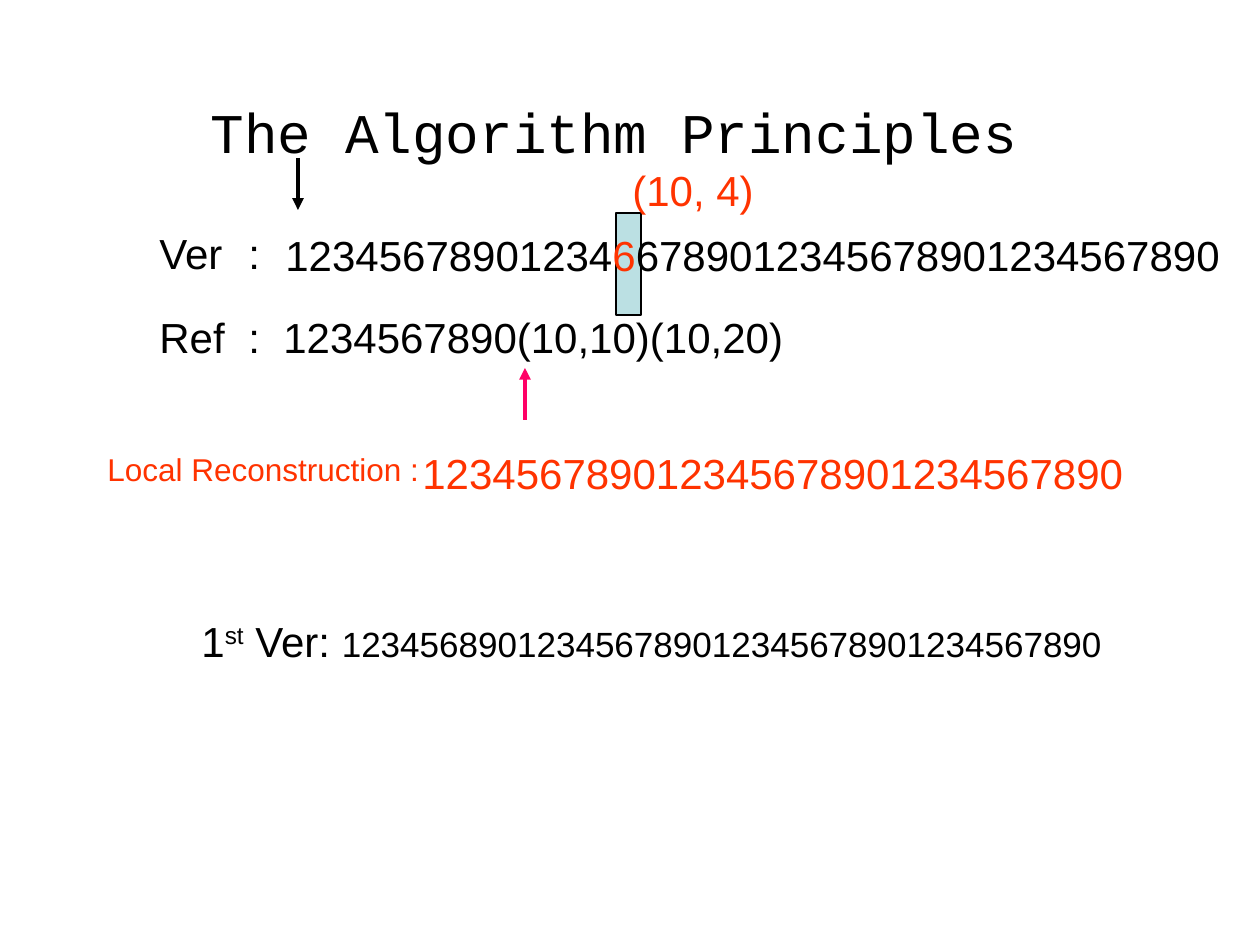
from typing import NamedTuple

from lxml.etree import SubElement
from pptx import Presentation
from pptx.dml.color import RGBColor
from pptx.enum.shapes import MSO_CONNECTOR as Connector, MSO_SHAPE as Shape
from pptx.enum.text import MSO_ANCHOR as Anchor, MSO_AUTO_SIZE as AutoSize, PP_ALIGN as Align
from pptx.oxml.ns import qn
from pptx.util import Emu, Pt

PX_PER_INCH = 126
BLACK = RGBColor(0x00, 0x00, 0x00)
ORANGE = RGBColor(0xFF, 0x33, 0x00)
PINK = RGBColor(0xFF, 0x00, 0x66)
PALE_TEAL = RGBColor(0xBB, 0xE0, 0xE3)
COLUMN_TABS = (89, 124)  # colon and digits, from the start of the label


class Run(NamedTuple):
    text: str
    color: RGBColor = BLACK
    size: int = 24
    superscript: bool = False


class Label(NamedTuple):
    left: int
    top: int
    width: int
    height: int
    runs: tuple[Run, ...]
    tabs: tuple[int, ...] = ()


class Arrow(NamedTuple):
    x: int
    start_y: int
    end_y: int
    color: RGBColor


LABELS = (
    Label(147, 305, 945, 63, (Run("Ref\t:\t1234567890(10,10)(10,20)"),), COLUMN_TABS),
    Label(147, 221, 126, 63, (Run("Ver\t:"),), COLUMN_TABS),
    Label(189, 609, 1092, 63, (
        Run("1"), Run("st", superscript=True), Run(" Ver: "),
        Run("123456890123456789012345678901234567890", size=20))),
    Label(273, 223, 966, 63, (
        Run("12345678901234"), Run("6", ORANGE), Run("6789012345678901234567890"))),
    Label(410, 441, 777, 63, (Run("123456789012345678901234567890", ORANGE),)),
    Label(95, 444, 347, 50, (Run("Local Reconstruction :", ORANGE, 18),)),
    Label(620, 158, 147, 63, (Run("(10, 4)", ORANGE),)),
)
ARROWS = (
    Arrow(298, 158, 210, BLACK),
    Arrow(525, 420, 368, PINK),
)


def px(length: int) -> Emu:
    return Emu(round(length * 914400 / PX_PER_INCH))


def add_run(p, text: str, *, size: int = 24, color: RGBColor = BLACK,
            font: str = "Arial", superscript: bool = False) -> None:
    r = p.add_run()
    r.text = text
    r.font.name = font
    r.font.size = Pt(size)
    r.font.color.rgb = color
    if superscript:
        r.font._element.set("baseline", "30000")


def add_label(slide, label: Label) -> None:
    box = slide.shapes.add_textbox(
        px(label.left), px(label.top), px(label.width), px(label.height))
    tf = box.text_frame
    tf.word_wrap = True
    p = tf.paragraphs[0]
    if label.tabs:
        stops = SubElement(p._p.get_or_add_pPr(), qn("a:tabLst"))
        for stop in label.tabs:
            SubElement(stops, qn("a:tab"), pos=str(px(stop)), algn="l")
    for run in label.runs:
        add_run(p, run.text, size=run.size, color=run.color, superscript=run.superscript)


def add_arrow(slide, arrow: Arrow) -> None:
    line = slide.shapes.add_connector(
        Connector.STRAIGHT, px(arrow.x), px(arrow.start_y), px(arrow.x), px(arrow.end_y))
    line.line.color.rgb = arrow.color
    line.line.width = Pt(2.25)
    SubElement(line.line._get_or_add_ln(), qn("a:tailEnd"), type="triangle")
    SubElement(line._element.spPr, qn("a:effectLst"))


def set_title(slide, text: str) -> None:
    title = slide.shapes.title
    title.left, title.top, title.width, title.height = px(126), px(95), px(977), px(73)
    tf = title.text_frame
    tf.auto_size = AutoSize.NONE
    tf.vertical_anchor = Anchor.MIDDLE
    p = tf.paragraphs[0]
    p.alignment = Align.CENTER
    add_run(p, text, size=32, font="Courier New")


def add_highlight(slide) -> None:
    sp = slide.shapes.add_shape(Shape.RECTANGLE, px(616), px(213), px(25), px(102))
    sp.shadow.inherit = False
    sp.fill.solid()
    sp.fill.fore_color.rgb = PALE_TEAL
    sp.line.color.rgb = BLACK
    sp.line.width = Pt(0.75)


def main() -> None:
    prs = Presentation()
    prs.slide_width, prs.slide_height = px(1260), px(945)
    s = prs.slides.add_slide(prs.slide_layouts[5])

    set_title(s, "The Algorithm Principles")

    # Mark behind the digit that differs
    add_highlight(s)

    # Version, reference and reconstruction strings
    for label in LABELS:
        add_label(s, label)

    # Current reading positions
    for arrow in ARROWS:
        add_arrow(s, arrow)

    prs.save("out.pptx")


if __name__ == "__main__":
    main()
